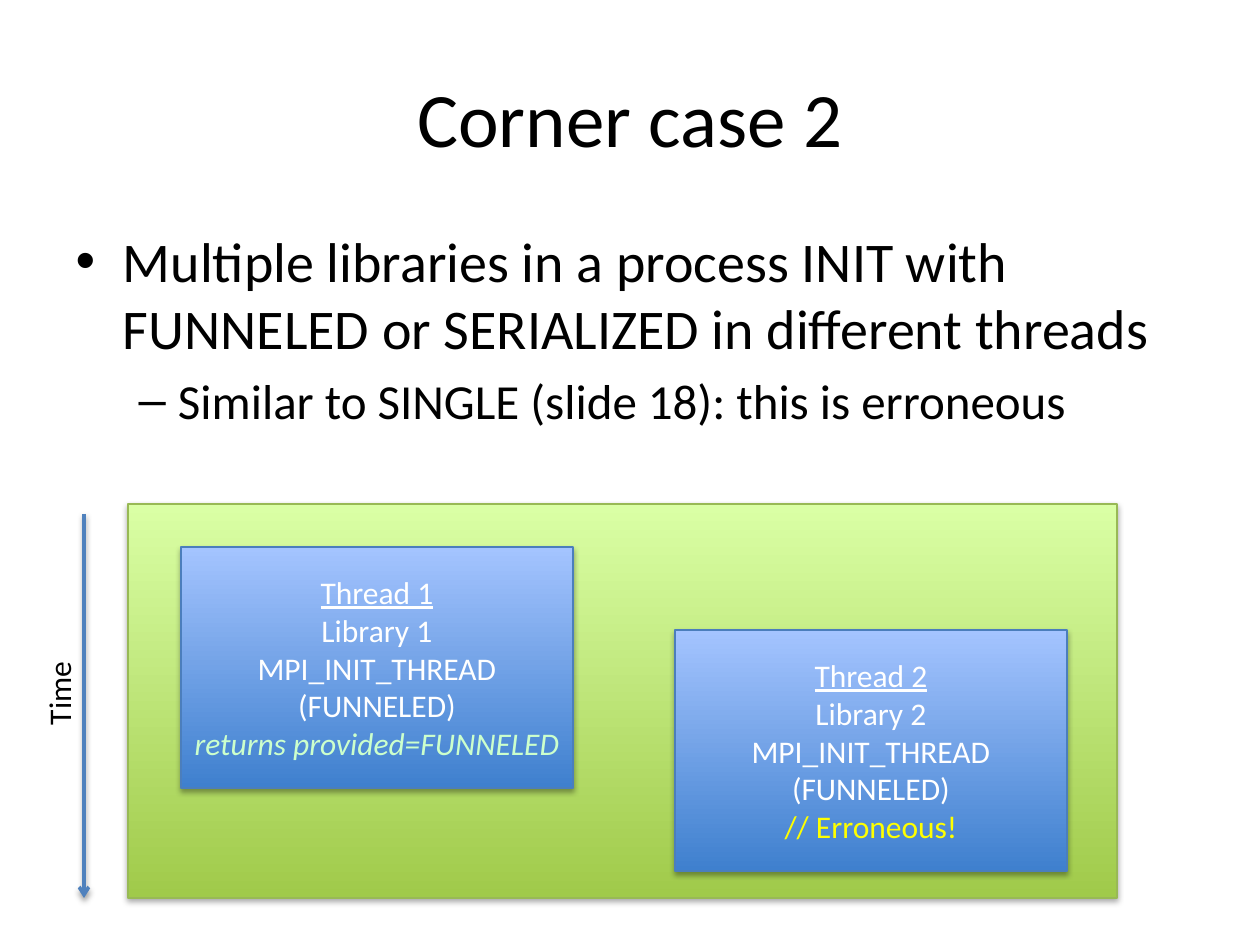
from lxml import etree
from pptx import Presentation, util as u
from pptx.dml.color import RGBColor
from pptx.enum import shapes, text
from pptx.oxml.ns import qn

# Content
TITLE = "Corner case 2"
BULLETS = [
    (0, 32, "Multiple libraries in a process INIT with FUNNELED or SERIALIZED in different threads"),
    (1, 28, "Similar to SINGLE (slide 18): this is erroneous"),
]
WHITE = RGBColor(0xFF, 0xFF, 0xFF)
BLACK = RGBColor(0, 0, 0)
MINT = RGBColor(0xCC, 0xFF, 0xCC)
YELLOW = RGBColor(0xFF, 0xFF, 0)
AXIS_BLUE = RGBColor(0x4F, 0x81, 0xBD)
# Bottom colour, top colour, outline
GREEN = (RGBColor(0xA0, 0xCA, 0x4A), RGBColor(0xDA, 0xFF, 0xA5), RGBColor(0x98, 0xB9, 0x55))
BLUE = (RGBColor(0x3F, 0x80, 0xCE), RGBColor(0xA4, 0xC4, 0xFF), RGBColor(0x4B, 0x7E, 0xBC))

# Left, top, number, outcome, outcome colour, outcome italic
THREADS = [
    (181, 547, 1, "returns provided=FUNNELED", MINT, True),
    (675, 630, 2, "// Erroneous!", YELLOW, False),
]
THREAD_SIZE = (392, 241)
PROCESS_BOX = (128, 504, 989, 394)
AXIS_X, AXIS_TOP, AXIS_BOTTOM = 84, 514, 898
TIME_BOX = (14, 668, 89, 50)
FONT = "Calibri"


def px(*lengths):
    return [u.Emu(round(length * 914400 / 126)) for length in lengths]


def set_font(paragraph, size, color):
    paragraph.font.name = FONT
    paragraph.font.size = u.Pt(size)
    paragraph.font.color.rgb = color


def add_box(slide, place, colors):
    """Gradient rectangle that keeps the theme's soft shadow."""
    box = slide.shapes.add_shape(shapes.MSO_SHAPE.RECTANGLE, *px(*place))
    box.fill.gradient()
    box.fill.gradient_angle = 90
    for stop, color in zip(box.fill.gradient_stops, colors):
        stop.color.rgb = color
    box.line.color.rgb = colors[2]
    box.line.width = u.Pt(0.75)
    return box


presentation = Presentation()
presentation.slide_width, presentation.slide_height = u.Inches(10), u.Inches(7.5)
slide = presentation.slides.add_slide(presentation.slide_layouts[1])
title, body = slide.placeholders

# Title and list
title.left, title.top, title.width, title.height = px(63, 38, 1134, 158)
title.text_frame.text = TITLE
set_font(title.text_frame.paragraphs[0], 44, BLACK)

body.left, body.top, body.width, body.height = px(63, 220, 1134, 624)
body.text_frame.text = "\n".join(words for _, _, words in BULLETS)
for paragraph, (level, size, _) in zip(body.text_frame.paragraphs, BULLETS):
    paragraph.level = level
    set_font(paragraph, size, BLACK)

# Process with its threads
add_box(slide, PROCESS_BOX, GREEN)
for left, top, number, outcome, outcome_color, italic in THREADS:
    frame = add_box(slide, (left, top, *THREAD_SIZE), BLUE).text_frame
    frame.vertical_anchor = text.MSO_ANCHOR.MIDDLE
    frame.text = "\n".join([f"Thread {number}", f"Library {number}",
                            "MPI_INIT_THREAD", "(FUNNELED)", outcome])
    for paragraph in frame.paragraphs:
        paragraph.alignment = text.PP_ALIGN.CENTER
        set_font(paragraph, 18, WHITE)
    frame.paragraphs[0].font.underline = True
    frame.paragraphs[-1].font.color.rgb = outcome_color
    frame.paragraphs[-1].font.italic = italic

# Time axis, with the theme's shadow
axis = slide.shapes.add_connector(
    shapes.MSO_CONNECTOR.STRAIGHT, *px(AXIS_X, AXIS_TOP, AXIS_X, AXIS_BOTTOM))
axis.line.color.rgb = AXIS_BLUE
axis.line.width = u.Pt(2)
etree.SubElement(axis.line._get_or_add_ln(), qn("a:tailEnd"), type="arrow")

label = slide.shapes.add_textbox(*px(*TIME_BOX))
label.rotation = 270
label.text_frame.word_wrap = False
label.text_frame.auto_size = text.MSO_AUTO_SIZE.SHAPE_TO_FIT_TEXT
label.text_frame.text = "Time"
set_font(label.text_frame.paragraphs[0], 18, BLACK)

presentation.save("out.pptx")
